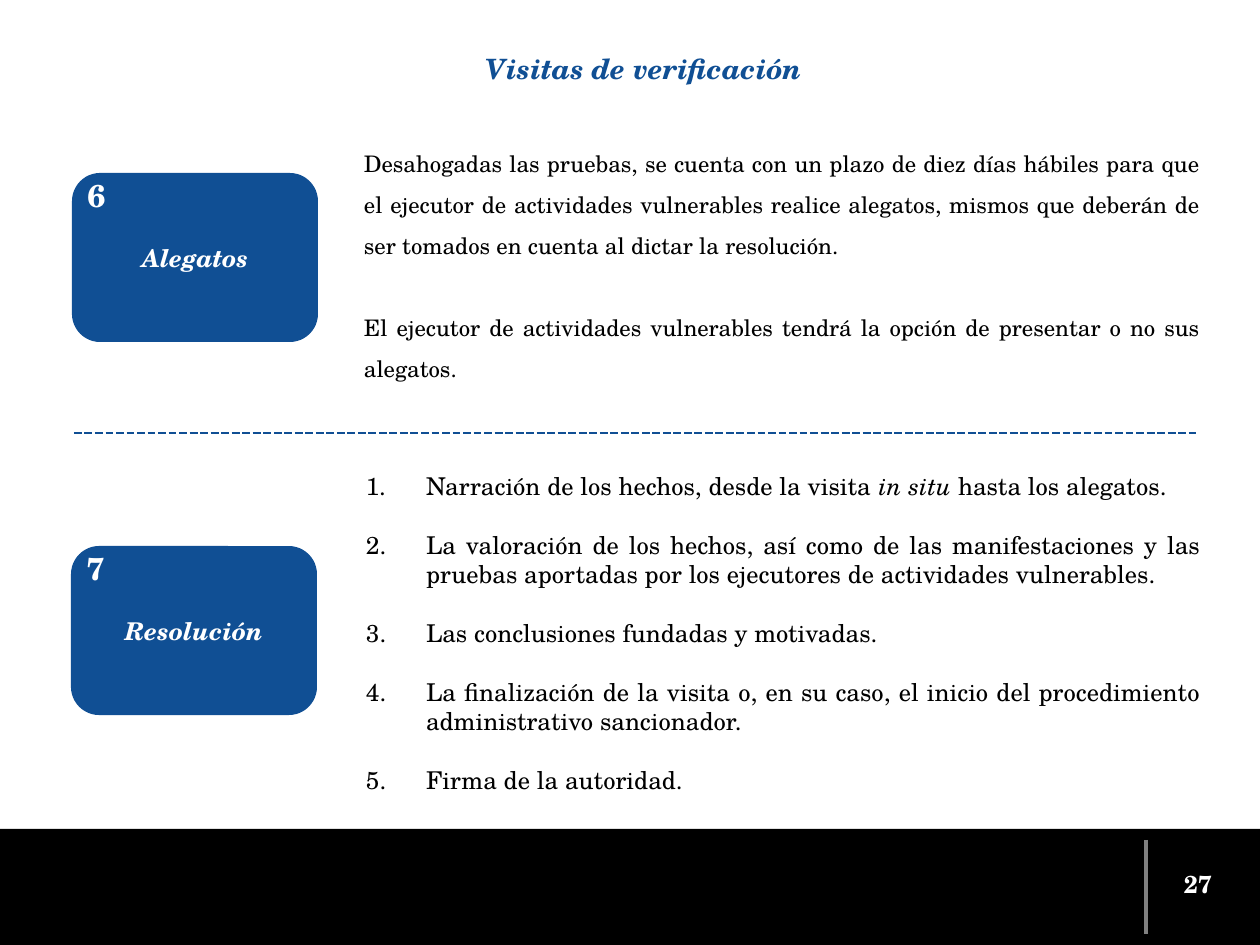
"""Builds the slide on verification visits: pleadings and resolution."""
import dataclasses

import lxml.etree
import pptx
import pptx.dml.color
import pptx.enum.dml
import pptx.enum.shapes
import pptx.enum.text
import pptx.oxml.ns
import pptx.util

ALIGN = pptx.enum.text.PP_ALIGN
ANCHOR = pptx.enum.text.MSO_ANCHOR
SHAPE = pptx.enum.shapes.MSO_SHAPE
DASH = pptx.enum.dml.MSO_LINE
EMU_PER_PX = 914400 / 126


@dataclasses.dataclass(frozen=True)
class Theme:
    """Colours, typeface and type sizes of the slide."""
    blue: str = "104F94"
    black: str = "000000"
    white: str = "FFFFFF"
    grey: str = "808080"
    typeface: str = "TeX Gyre Schola"
    title: int = 16
    number: int = 18
    label: int = 14
    listing: int = 14
    body: int = 13


THEME = Theme()

PLEADINGS = [
    "Desahogadas las pruebas, se cuenta con un plazo de diez días hábiles para que "
    "el ejecutor de actividades vulnerables realice alegatos, mismos que deberán de "
    "ser tomados en cuenta al dictar la resolución.",
    "El ejecutor de actividades vulnerables tendrá la opción de presentar o no sus "
    "alegatos.",
]
RESOLUTION = [
    ["Narración de los hechos, desde la visita ", "in situ", " hasta los alegatos."],
    ["La valoración de los hechos, así como de las manifestaciones y las pruebas "
     "aportadas por los ejecutores de actividades vulnerables."],
    ["Las conclusiones fundadas y motivadas."],
    ["La finalización de la visita o, en su caso, el inicio del procedimiento "
     "administrativo sancionador."],
    ["Firma de la autoridad."],
]
STAGES = [("6", "Alegatos", 72, 173), ("7", "Resolución", 71, 546)]


def px(length):
    """Turn px into EMU."""
    return pptx.util.Emu(round(length * EMU_PER_PX))


def rgb(colour):
    """Turn a hex string into a colour."""
    return pptx.dml.color.RGBColor.from_string(colour)


def apply(target, **values):
    """Set each named format value on the target."""
    for name, value in values.items():
        setattr(target, name, value)


def set_frame(frame, inset_x, inset_y, anchor):
    """Set wrapping, insets and anchor of a text frame."""
    apply(frame, word_wrap=True, vertical_anchor=anchor,
          auto_size=pptx.enum.text.MSO_AUTO_SIZE.NONE,
          margin_left=px(inset_x), margin_right=px(inset_x),
          margin_top=px(inset_y), margin_bottom=px(inset_y))


def add_run(paragraph, text, size, colour, **style):
    """Add one run of text in the theme typeface."""
    run = paragraph.add_run()
    run.text = text
    apply(run.font, name=THEME.typeface, size=pptx.util.Pt(size), **style)
    run.font.color.rgb = rgb(colour)


def add_centred(frame, text, size, colour, **style):
    """Write a single centred bold line."""
    paragraph = frame.paragraphs[0]
    paragraph.alignment = ALIGN.CENTER
    add_run(paragraph, text, size, colour, bold=True, **style)


def add_text_box(slide, box, inset_x, inset_y, anchor=ANCHOR.TOP):
    """Add a text box and return its frame."""
    frame = slide.shapes.add_textbox(*map(px, box)).text_frame
    set_frame(frame, inset_x, inset_y, anchor)
    return frame


def add_block(shapes, kind, box, fill=None):
    """Add a preset shape without line or shadow."""
    block = shapes.add_shape(kind, *map(px, box))
    block.shadow.inherit = False
    block.line.fill.background()
    if fill:
        block.fill.solid()
        block.fill.fore_color.rgb = rgb(fill)
    else:
        block.fill.background()
    set_frame(block.text_frame, 13, 6, ANCHOR.MIDDLE)
    return block


def add_rule(slide, start, end, colour, width, dash=DASH.SOLID):
    """Add a straight rule."""
    rule = slide.shapes.add_connector(
        pptx.enum.shapes.MSO_CONNECTOR.STRAIGHT, *map(px, start + end))
    apply(rule.line, width=pptx.util.Pt(width), dash_style=dash)
    rule.line.color.rgb = rgb(colour)
    properties = rule.element.find(pptx.oxml.ns.qn("p:spPr"))
    lxml.etree.SubElement(properties, pptx.oxml.ns.qn("a:effectLst"))


def add_stage(slide, number, label, left, top):
    """Add a stage card with its number in the corner."""
    shapes = slide.shapes.add_group_shape().shapes
    card = add_block(shapes, SHAPE.ROUNDED_RECTANGLE, (left, top, 246, 169), THEME.blue)
    add_centred(card.text_frame, label, THEME.label, THEME.white, italic=True)
    corner = add_block(shapes, SHAPE.OVAL, (left - 28, top - 24, 105, 92))
    add_centred(corner.text_frame, number, THEME.number, THEME.white)


def add_paragraphs(frame, count, gap, line_spacing):
    """Return justified paragraphs separated by a gap in points."""
    paragraphs = [frame.paragraphs[0]] + [frame.add_paragraph() for _ in range(count - 1)]
    for index, paragraph in enumerate(paragraphs):
        apply(paragraph, alignment=ALIGN.JUSTIFY, line_spacing=line_spacing,
              space_before=pptx.util.Pt(gap if index else 0))
    return paragraphs


def number_paragraph(paragraph, indent):
    """Give a paragraph an automatic number and a hanging indent."""
    properties = paragraph._p.get_or_add_pPr()
    properties.set("marL", str(px(indent)))
    properties.set("indent", str(-px(indent)))
    lxml.etree.SubElement(properties, pptx.oxml.ns.qn("a:buFont"), typeface="+mj-lt")
    lxml.etree.SubElement(properties, pptx.oxml.ns.qn("a:buAutoNum"), type="arabicPeriod")


def add_title(slide, text):
    """Place and format the title placeholder."""
    title = slide.shapes.title
    apply(title, left=px(74), top=px(48), width=px(1139), height=px(45))
    set_frame(title.text_frame, 9, 5, ANCHOR.MIDDLE)
    title.text_frame.paragraphs[0].line_spacing = 0.9
    add_centred(title.text_frame, text, THEME.title, THEME.blue, italic=True)


def add_footer(slide, page):
    """Add the black band with its divider and page number."""
    add_block(slide.shapes, SHAPE.RECTANGLE, (0, 829, 1260, 116), THEME.black)
    add_rule(slide, (1146, 840), (1146, 934), THEME.grey, 2)
    frame = add_text_box(slide, (1148, 859, 100, 50), 13, 6, ANCHOR.MIDDLE)
    add_centred(frame, page, THEME.label, THEME.white)


def add_pleadings(slide):
    """Add the paragraphs on pleadings."""
    frame = add_text_box(slide, (348, 127, 867, 266), 16, 9)
    paragraphs = add_paragraphs(frame, len(PLEADINGS), 23.4, 1.5)
    for paragraph, text in zip(paragraphs, PLEADINGS):
        add_run(paragraph, text, THEME.body, THEME.black)


def add_resolution(slide):
    """Add the numbered contents of the resolution."""
    frame = add_text_box(slide, (350, 462, 867, 344), 16, 9)
    paragraphs = add_paragraphs(frame, len(RESOLUTION), 16.8, 1.0)
    for paragraph, parts in zip(paragraphs, RESOLUTION):
        number_paragraph(paragraph, 60)
        for index, text in enumerate(parts):
            add_run(paragraph, text, THEME.listing, THEME.black, italic=index == 1)


def main():
    """Build and save the slide."""
    deck = pptx.Presentation()
    apply(deck, slide_width=px(1260), slide_height=px(945))
    slide = deck.slides.add_slide(deck.slide_layouts.get_by_name("Title Only"))
    add_footer(slide, "27")
    add_title(slide, "Visitas de verificación")
    add_pleadings(slide)
    add_rule(slide, (74, 433), (1196, 433), THEME.blue, 1.5, DASH.SQUARE_DOT)
    add_resolution(slide)
    for stage in STAGES:
        add_stage(slide, *stage)
    deck.save("out.pptx")


if __name__ == "__main__":
    main()
